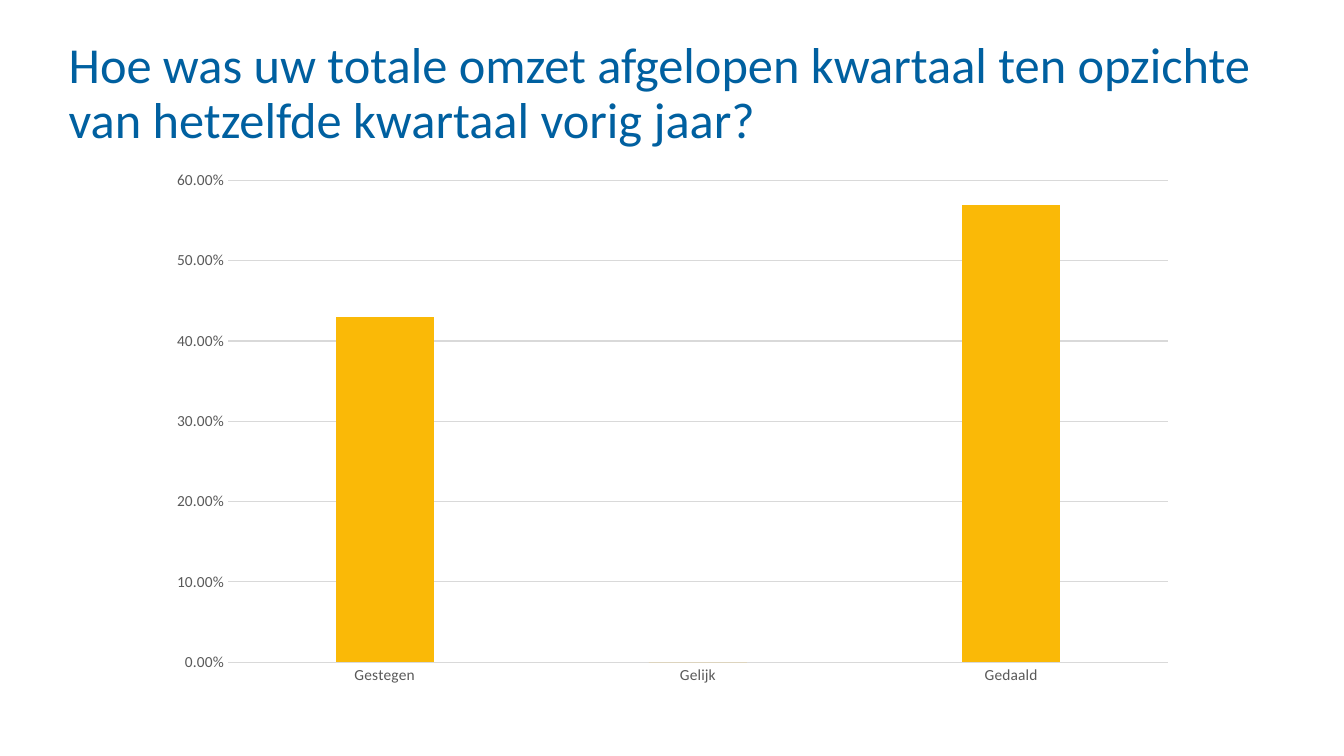
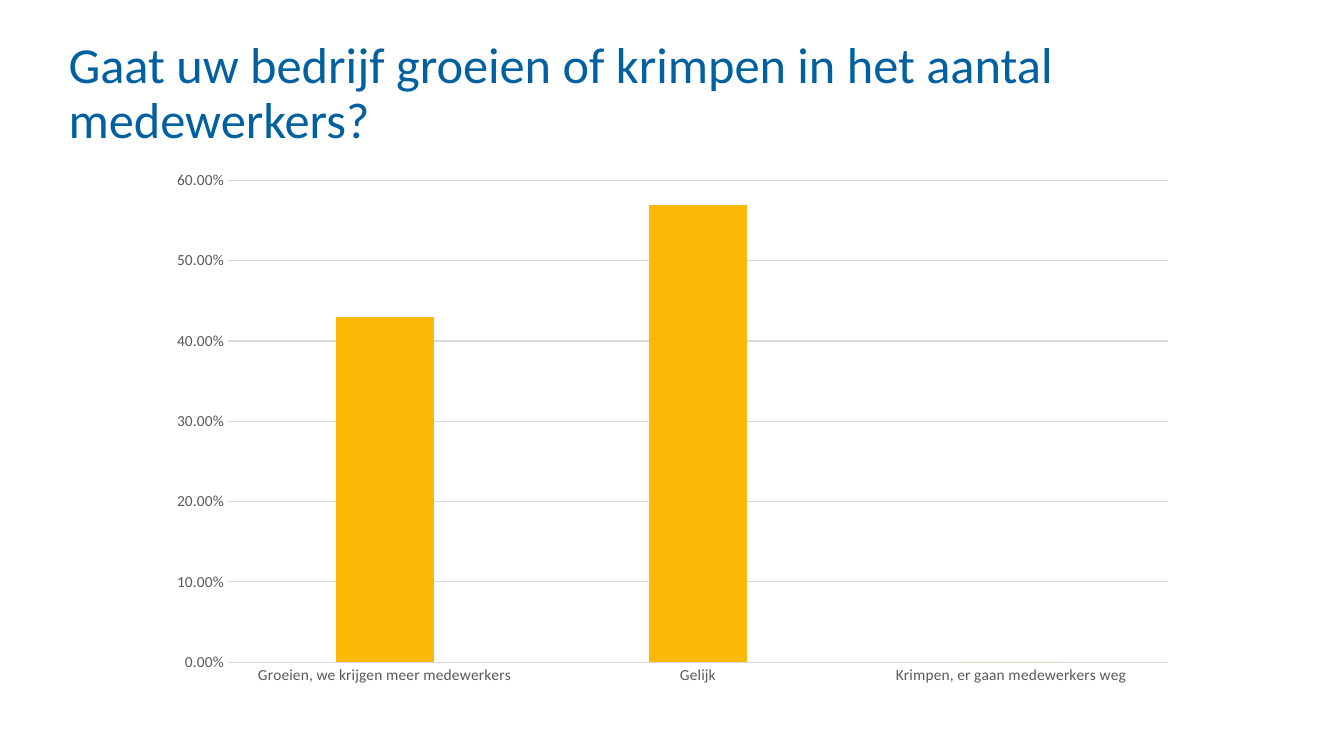
from pptx import Presentation
from pptx.chart.data import CategoryChartData
from pptx.dml.color import RGBColor
from pptx.enum.chart import XL_CHART_TYPE, XL_TICK_MARK
from pptx.enum.text import MSO_ANCHOR
from pptx.util import Cm, Pt

FONT = "Calibri"
BLUE = RGBColor(0x00, 0x60, 0xA0)
YELLOW = RGBColor(0xFA, 0xB9, 0x07)
BLACK = RGBColor(0x00, 0x00, 0x00)
GREY = RGBColor(0x59, 0x59, 0x59)
LIGHT_GREY = RGBColor(0xD9, 0xD9, 0xD9)

TITLE_BOX = Cm(1.73), Cm(1.02), Cm(30.2), Cm(1.93)
CHART_BOX = Cm(3.94), Cm(4.04), Cm(26.01), Cm(13.49)

QUESTIONS = [
    ("Hoe was uw totale omzet afgelopen kwartaal ten opzichte van hetzelfde kwartaal vorig jaar?",
     {"Gestegen": 0.43, "Gelijk": 0, "Gedaald": 0.57}),
    ("Gaat uw bedrijf groeien of krimpen in het aantal medewerkers?",
     {"Groeien, we krijgen meer medewerkers": 0.43, "Gelijk": 0.57,
      "Krimpen, er gaan medewerkers weg": 0}),
]


def set_font(font, size, color):
    font.name, font.size, font.color.rgb = FONT, Pt(size), color


def add_text(slide, text, box, size=36, color=BLUE, line_spacing=0.9):
    tf = slide.shapes.add_textbox(*box).text_frame
    tf.word_wrap = True
    tf.vertical_anchor = MSO_ANCHOR.TOP
    tf.margin_left = tf.margin_right = tf.margin_top = tf.margin_bottom = 0
    p = tf.paragraphs[0]
    p.line_spacing = line_spacing
    r = p.add_run()
    r.text = text
    set_font(r.font, size, color)


def style_line(line):
    line.color.rgb = LIGHT_GREY
    line.width = Pt(0.75)


def add_answer_chart(slide, answers):
    data = CategoryChartData(number_format="0.00%")
    data.categories = list(answers)
    data.add_series("Series 1", list(answers.values()))
    chart = slide.shapes.add_chart(XL_CHART_TYPE.COLUMN_CLUSTERED, *CHART_BOX, data).chart
    chart.has_title = chart.has_legend = False
    set_font(chart.font, 10, BLACK)

    plot = chart.plots[0]
    plot.gap_width, plot.overlap = 219, -27
    plot.vary_by_categories = False
    fill = plot.series[0].format.fill
    fill.solid()
    fill.fore_color.rgb = YELLOW

    cat_axis, val_axis = chart.category_axis, chart.value_axis
    for axis in (cat_axis, val_axis):
        axis.major_tick_mark = axis.minor_tick_mark = XL_TICK_MARK.NONE
        set_font(axis.tick_labels.font, 11, GREY)
    style_line(cat_axis.format.line)
    val_axis.format.line.fill.background()
    style_line(val_axis.major_gridlines.format.line)
    val_axis.minimum_scale, val_axis.maximum_scale, val_axis.major_unit = 0, 0.6, 0.1
    val_axis.tick_labels.number_format = "0.00%"
    val_axis.tick_labels.number_format_is_linked = False


def main():
    prs = Presentation()
    prs.slide_width, prs.slide_height = Cm(33.87), Cm(19.05)
    for title, answers in QUESTIONS:
        s = prs.slides.add_slide(prs.slide_layouts[6])
        add_text(s, title, TITLE_BOX)
        add_answer_chart(s, answers)
    prs.save("out.pptx")


if __name__ == "__main__":
    main()
